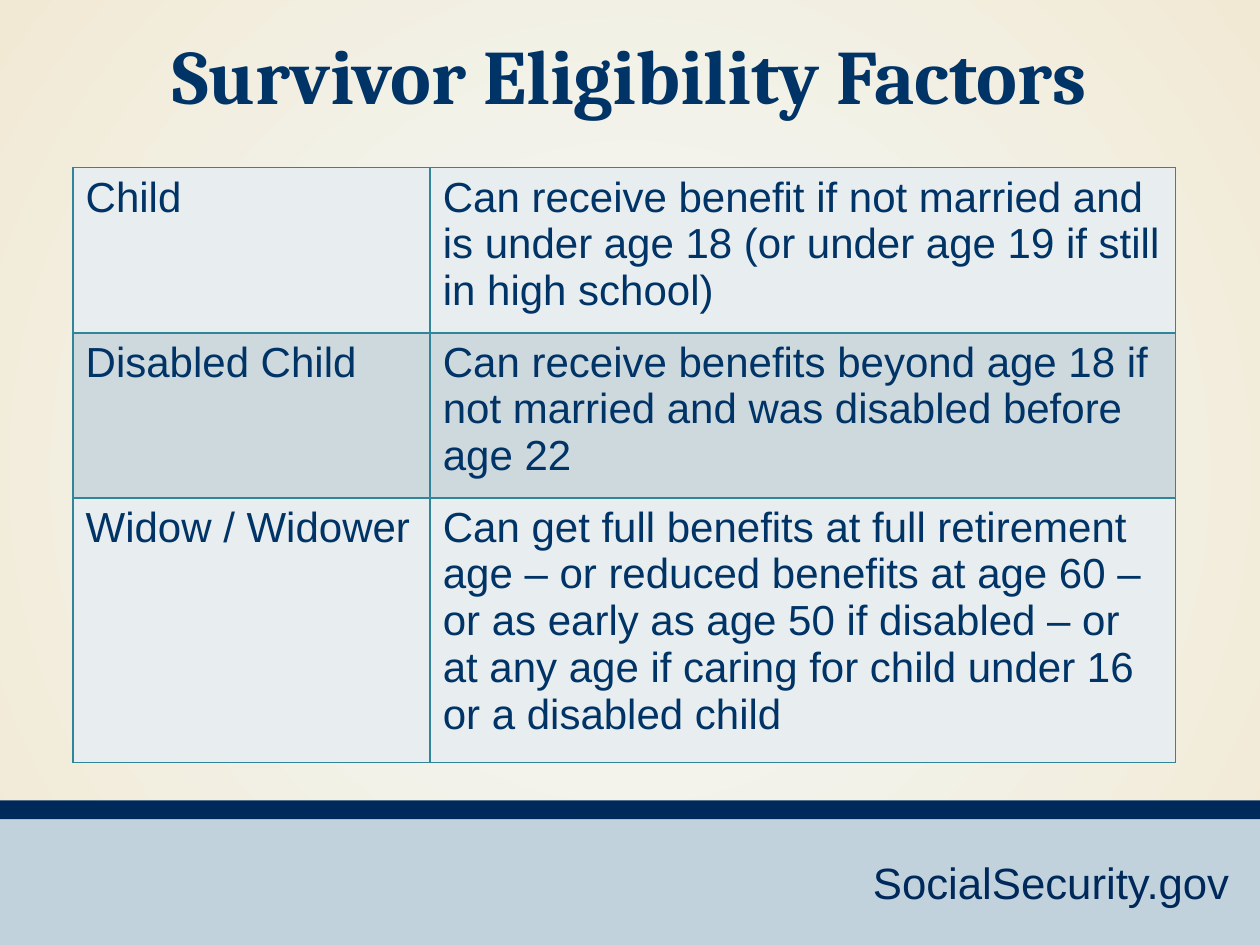
from dataclasses import dataclass

from lxml import etree
from pptx import Presentation
from pptx.dml.color import RGBColor
from pptx.enum.shapes import MSO_SHAPE
from pptx.enum.text import MSO_AUTO_SIZE, PP_ALIGN
from pptx.oxml.ns import qn
from pptx.util import Inches, Pt

RECTANGLE = MSO_SHAPE.RECTANGLE
LEFT, CENTER = PP_ALIGN.LEFT, PP_ALIGN.CENTER
GROW = MSO_AUTO_SIZE.SHAPE_TO_FIT_TEXT
WIDTH, HEIGHT = 10, 7.5


@dataclass(frozen=True)
class Theme:
    glow: str = "F3FAFB"
    sand: str = "F2E9D5"
    navy: str = "00295B"
    ink: str = "003366"
    footer: str = "C1D2DC"
    border: str = "31859B"
    bands: tuple = ("E8EDEF", "CED9DE")
    heading_font: str = "Cambria"
    body_font: str = "Arial"
    title_size: int = 44
    footer_size: int = 25
    body_size: int = 24
    border_width: int = 1


class SlideBuilder:
    """Places elements by percentages of the slide's width and height."""

    def __init__(self, deck, theme):
        self.theme = theme
        self.page = deck.slides.add_slide(deck.slide_layouts[6])

    def place(self, left, top, width, height):
        return (Inches(left * WIDTH / 100), Inches(top * HEIGHT / 100),
                Inches(width * WIDTH / 100), Inches(height * HEIGHT / 100))

    def background(self, center, edge):
        fill = self.page.background.fill
        fill.gradient()
        for stop, color, position in zip(fill.gradient_stops, (center, edge), (0, 1)):
            stop.color.rgb = RGBColor.from_string(color)
            stop.position = position
        # Turn the linear gradient into a circular one around the middle
        linear = self.page.element.find(".//" + qn("a:lin"))
        circle = etree.Element(qn("a:path"), path="circle")
        etree.SubElement(circle, qn("a:fillToRect"), l="50000", t="50000", r="50000", b="50000")
        linear.getparent().replace(linear, circle)

    def bar(self, area, color):
        shape = self.page.shapes.add_shape(RECTANGLE, *self.place(*area))
        shape.shadow.inherit = False
        shape.fill.solid()
        shape.fill.fore_color.rgb = RGBColor.from_string(color)
        shape.line.fill.background()

    def set_text(self, frame, text, font, size, color, bold=False, align=LEFT):
        para = frame.paragraphs[0]
        para.text = text
        para.alignment = align
        para.font.name = font
        para.font.size = Pt(size)
        para.font.bold = bold
        para.font.color.rgb = RGBColor.from_string(color)

    def text(self, area, text, font, size, color, **style):
        frame = self.page.shapes.add_textbox(*self.place(*area)).text_frame
        frame.word_wrap = True
        frame.auto_size = GROW
        self.set_text(frame, text, font, size, color, **style)

    def outline(self, cell):
        properties = cell._tc.get_or_add_tcPr()
        for index, side in enumerate(("lnL", "lnR", "lnT", "lnB")):
            line = etree.Element(qn("a:" + side), w=str(Pt(self.theme.border_width)))
            solid = etree.SubElement(line, qn("a:solidFill"))
            etree.SubElement(solid, qn("a:srgbClr"), val=self.theme.border)
            properties.insert(index, line)

    def table(self, area, rows, column_shares, row_shares):
        theme = self.theme
        left, top, width, height = self.place(*area)
        table = self.page.shapes.add_table(
            len(rows), len(column_shares), left, top, width, height).table
        table.first_row = False
        table.horz_banding = False
        for column, share in zip(table.columns, column_shares):
            column.width = int(width * share / 100)
        for row, share in zip(table.rows, row_shares):
            row.height = int(height * share / 100)
        for index, (row, texts) in enumerate(zip(table.rows, rows)):
            for cell, text in zip(row.cells, texts):
                cell.fill.solid()
                cell.fill.fore_color.rgb = RGBColor.from_string(theme.bands[index % 2])
                self.outline(cell)
                self.set_text(cell.text_frame, text, theme.body_font, theme.body_size, theme.ink)


FACTORS = [
    ("Child",
     "Can receive benefit if not married and is under age 18 "
     "(or under age 19 if still in high school)"),
    ("Disabled Child",
     "Can receive benefits beyond age 18 if not married and was disabled before age 22"),
    ("Widow / Widower",
     "Can get full benefits at full retirement age – or reduced benefits at age 60 – "
     "or as early as age 50 if disabled – or at any age if caring for child under 16 "
     "or a disabled child"),
]


def main():
    deck = Presentation()
    deck.slide_width, deck.slide_height = Inches(WIDTH), Inches(HEIGHT)
    theme = Theme()
    slide = SlideBuilder(deck, theme)

    # Background and footer
    slide.background(theme.glow, theme.sand)
    slide.bar((0, 86, 100, 14), theme.footer)
    slide.bar((0, 84.7, 100, 2), theme.navy)
    slide.text((68.3, 89.9, 30.7, 7), "SocialSecurity.gov",
               theme.body_font, theme.footer_size, theme.navy)

    # Title
    slide.text((0, 2.3, 100, 11.2), "Survivor Eligibility Factors", theme.heading_font,
               theme.title_size, theme.ink, bold=True, align=CENTER)

    # Eligibility table
    slide.table((5.8, 17.75, 87.5, 62.95), FACTORS, (32.4, 67.6), (27.75, 27.75, 44.5))

    deck.save("out.pptx")


if __name__ == "__main__":
    main()
